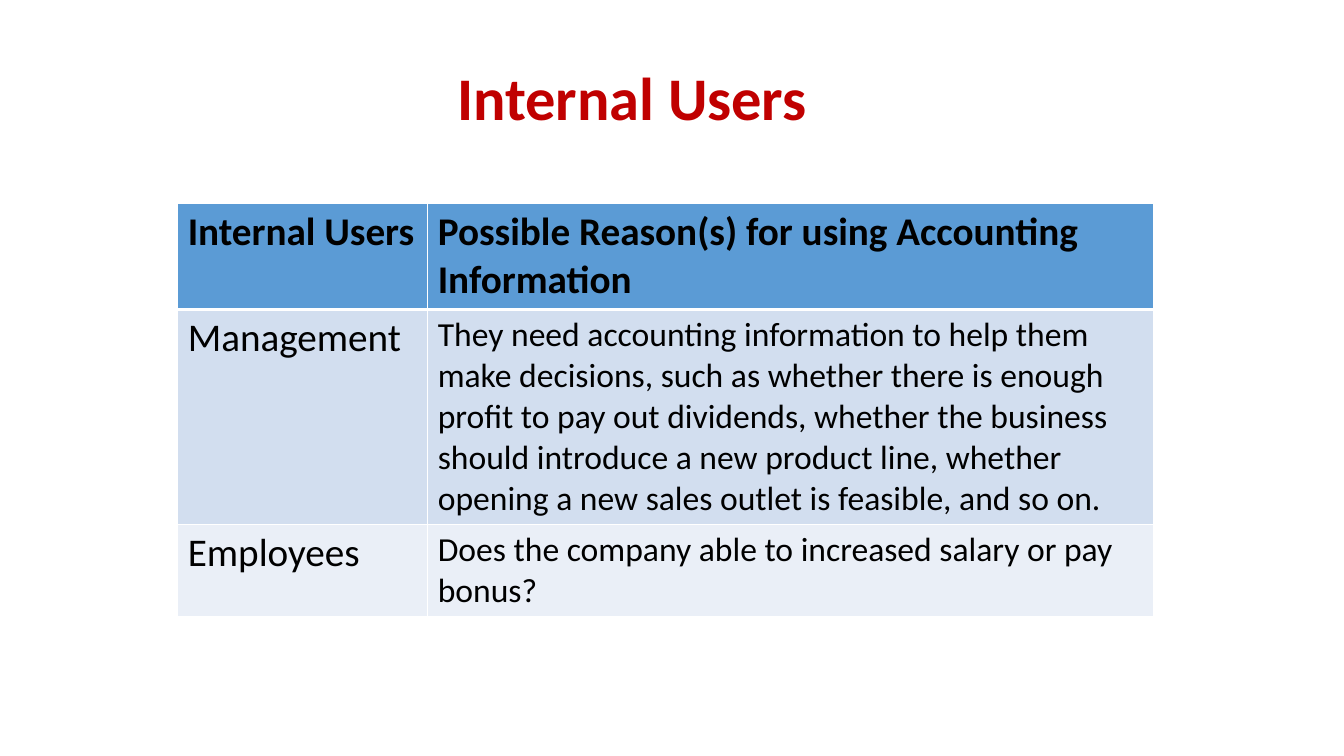
"""Builds a slide with a table of the internal users of accounting information."""
from lxml.etree import SubElement
from pptx import Presentation
from pptx.dml.color import RGBColor
from pptx.enum.text import MSO_ANCHOR as Anchor, PP_ALIGN as Align
from pptx.oxml.ns import qn
from pptx.util import Cm, Pt

RED = RGBColor(0xC0, 0x00, 0x00)
BLACK = RGBColor(0x00, 0x00, 0x00)
WHITE = RGBColor(0xFF, 0xFF, 0xFF)
HEADER_BLUE = RGBColor(0x5B, 0x9B, 0xD5)
BAND_BLUES = (RGBColor(0xD2, 0xDE, 0xEF), RGBColor(0xEA, 0xEF, 0xF7))
FONT = "Calibri"
COLUMN_WIDTHS = (6.3, 18.29)
ROW_HEIGHTS = (2.64, 5.4, 2.32)
USERS = (
    ("Internal Users", "Possible Reason(s) for using Accounting Information"),
    ("Management",
     "They need accounting information to help them make decisions, such as "
     "whether there is enough profit to pay out dividends, whether the business "
     "should introduce a new product line, whether opening a new sales outlet "
     "is feasible, and so on."),
    ("Employees", "Does the company able to increased salary or pay bonus?"),
)


def style_text(para, size, color, bold):
    for span in para.runs:
        font = span.font
        font.name, font.size, font.bold = FONT, Pt(size), bold
        font.color.rgb = color


def add_title(page, text):
    box = page.shapes.title
    box.left, box.top, box.width, box.height = Cm(2.34), Cm(1.52), Cm(27.53), Cm(2.03)
    frame = box.text_frame
    frame.text = text
    frame.vertical_anchor = Anchor.MIDDLE
    para = frame.paragraphs[0]
    para.alignment = Align.CENTER
    para.line_spacing = 0.9
    style_text(para, 43.2, RED, True)


def add_borders(cell, widths):
    properties = cell._tc.get_or_add_tcPr()
    for side, width in widths.items():
        line = SubElement(properties, qn(f"a:ln{side}"), w=str(Pt(width)))
        fill = SubElement(line, qn("a:solidFill"))
        SubElement(fill, qn("a:srgbClr"), val=str(WHITE))


def fill_cell(cell, text, row, column):
    header = row == 0
    add_borders(cell, {"L": 1, "R": 1, "T": 3 if row == 1 else 1, "B": 3 if header else 1})
    cell.fill.solid()
    cell.fill.fore_color.rgb = HEADER_BLUE if header else BAND_BLUES[(row - 1) % 2]
    cell.text_frame.text = text
    size = 28 if header or column == 0 else 24
    style_text(cell.text_frame.paragraphs[0], size, BLACK, header)


def add_user_table(page):
    frame = page.shapes.add_table(
        len(USERS), len(COLUMN_WIDTHS), Cm(4.48), Cm(5.13),
        Cm(sum(COLUMN_WIDTHS)), Cm(sum(ROW_HEIGHTS)))
    table = frame.table
    for column, width in zip(table.columns, COLUMN_WIDTHS):
        column.width = Cm(width)
    for row, height in zip(table.rows, ROW_HEIGHTS):
        row.height = Cm(height)
    for row, texts in enumerate(USERS):
        for column, text in enumerate(texts):
            fill_cell(table.cell(row, column), text, row, column)


def main():
    deck = Presentation()
    deck.slide_width, deck.slide_height = Cm(33.87), Cm(19.05)
    page = deck.slides.add_slide(deck.slide_layouts[5])
    add_title(page, "Internal Users ")
    add_user_table(page)
    deck.save("out.pptx")


if __name__ == "__main__":
    main()
